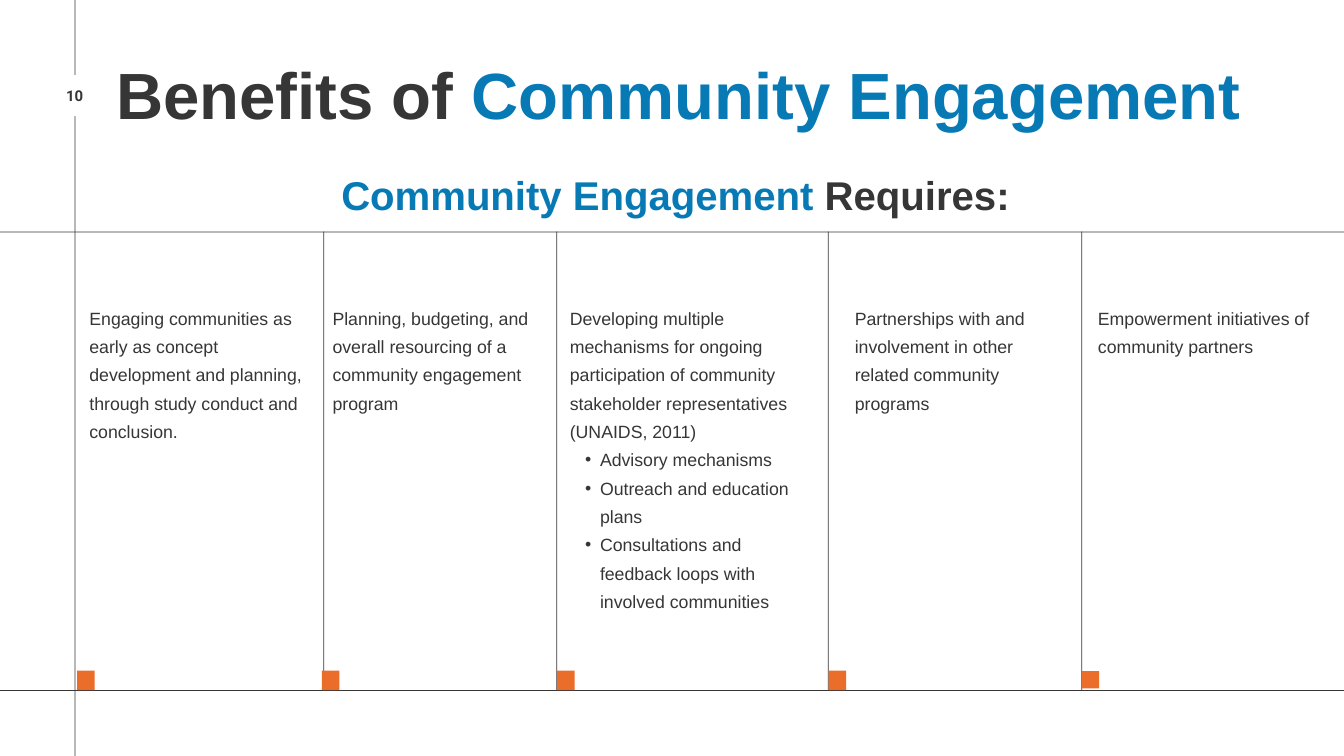
from dataclasses import dataclass

from lxml import etree
from pptx import Presentation
from pptx import util as u
from pptx.dml.color import RGBColor
from pptx.enum import shapes, text
from pptx.oxml.ns import qn

COLORS = {"ink": "373636", "blue": "077AB5", "orange": "EA6D29", "white": "FFFFFF"}
SLIDE_W, SLIDE_H = 50.8, 28.58
RULE = 0.03
TOP, BOTTOM = 8.76, 26.09
MARKER_W, MARKER_H = 0.66, 0.74
BODY_TOP = 11.35


@dataclass
class Run:
    text: str
    size: float
    color: str = "ink"
    bold: bool = True
    font: str = "Arial"


@dataclass
class Column:
    rule_x: float
    marker_x: float
    text_x: float
    text_w: float
    text_h: float
    body: str
    bullets: tuple[str, ...] = ()
    marker_h: float = MARKER_H
    marker_top: float = 25.35


COLUMNS = [
    Column(2.82, 2.92, 3.38, 8.38, 6.27,
           "Engaging communities as early as concept development and planning, "
           "through study conduct and conclusion."),
    Column(12.22, 12.17, 12.57, 8.74, 5.21,
           "Planning, budgeting, and overall resourcing of a community engagement program"),
    Column(21.03, 21.06, 21.54, 9.37, 12.62,
           "Developing multiple mechanisms for ongoing participation of community "
           "stakeholder representatives (UNAIDS, 2011)",
           ("Advisory mechanisms",
            "Outreach and education plans",
            "Consultations and feedback loops with involved communities")),
    Column(31.29, 31.32, 32.31, 7.92, 5.21,
           "Partnerships with and involvement in other related community programs"),
    Column(40.87, 40.89, 41.5, 8.74, 2.03,
           "Empowerment initiatives of community partners",
           marker_h=MARKER_W, marker_top=25.37),
]


def add_rect(s, x: float, y: float, w: float, h: float, color: str) -> None:
    sp = s.shapes.add_shape(shapes.MSO_SHAPE.RECTANGLE, u.Cm(x), u.Cm(y), u.Cm(w), u.Cm(h))
    sp.shadow.inherit = False
    sp.fill.solid()
    sp.fill.fore_color.rgb = RGBColor.from_string(COLORS[color])
    sp.line.fill.background()


def add_text_box(s, x: float, y: float, w: float, h: float):
    tf = s.shapes.add_textbox(u.Cm(x), u.Cm(y), u.Cm(w), u.Cm(h)).text_frame
    tf.word_wrap = True
    tf.auto_size = text.MSO_AUTO_SIZE.SHAPE_TO_FIT_TEXT
    tf.margin_left = tf.margin_right = tf.margin_top = tf.margin_bottom = 0
    return tf


def fill_paragraph(p, spacing: float, *runs: Run) -> None:
    p.line_spacing = u.Pt(spacing)
    for run in runs:
        r = p.add_run()
        r.text = run.text
        r.font.name = run.font
        r.font.size = u.Pt(run.size)
        r.font.bold = run.bold
        r.font.color.rgb = RGBColor.from_string(COLORS[run.color])


def add_bullet(p) -> None:
    p.level = 1
    pPr = p._p.get_or_add_pPr()
    pPr.set("marL", str(u.Cm(1.14)))
    pPr.set("indent", str(u.Cm(-0.56)))
    etree.SubElement(pPr, qn("a:buFont")).set("typeface", "Arial")
    etree.SubElement(pPr, qn("a:buChar")).set("char", "•")


def add_column_text(s, col: Column) -> None:
    tf = add_text_box(s, col.text_x, BODY_TOP, col.text_w, col.text_h)
    fill_paragraph(tf.paragraphs[0], 30.4, Run(col.body, 19, bold=False))
    for item in col.bullets:
        p = tf.add_paragraph()
        add_bullet(p)
        fill_paragraph(p, 30.4, Run(item, 19, bold=False))


def add_page_number(s, number: str) -> None:
    """Interrupt the left rule with a white patch that carries the number."""
    add_rect(s, 1.73, 2.84, 2.18, 1.55, "white")
    p = add_text_box(s, 1.9, 3.33, 1.85, 0.64).paragraphs[0]
    p.alignment = text.PP_ALIGN.CENTER
    fill_paragraph(p, 17.6, Run(number, 16, font="Roboto"))


def main() -> None:
    prs = Presentation()
    prs.slide_width, prs.slide_height = u.Cm(SLIDE_W), u.Cm(SLIDE_H)
    s = prs.slides.add_slide(prs.slide_layouts[6])

    first, *others = COLUMNS
    add_rect(s, first.rule_x, 0, RULE, SLIDE_H, "ink")
    add_page_number(s, "10")
    for y in (TOP, BOTTOM):
        add_rect(s, 0, y, SLIDE_W, RULE, "ink")
    for col in others:
        add_rect(s, col.rule_x, TOP, RULE, BOTTOM - TOP, "ink")
    for col in COLUMNS:
        add_rect(s, col.marker_x, col.marker_top, MARKER_W, col.marker_h, "orange")

    title = add_text_box(s, 4.39, 2.31, 46.15, 2.79)
    fill_paragraph(title.paragraphs[0], 77,
                   Run("Benefits of ", 70), Run("Community Engagement", 70, "blue"))
    subtitle = add_text_box(s, 12.9, 6.6, 26.64, 1.7)
    fill_paragraph(subtitle.paragraphs[0], 47.3,
                   Run("Community Engagement ", 43, "blue"), Run("Requires:", 43))
    for col in COLUMNS:
        add_column_text(s, col)

    prs.save("out.pptx")


if __name__ == "__main__":
    main()
